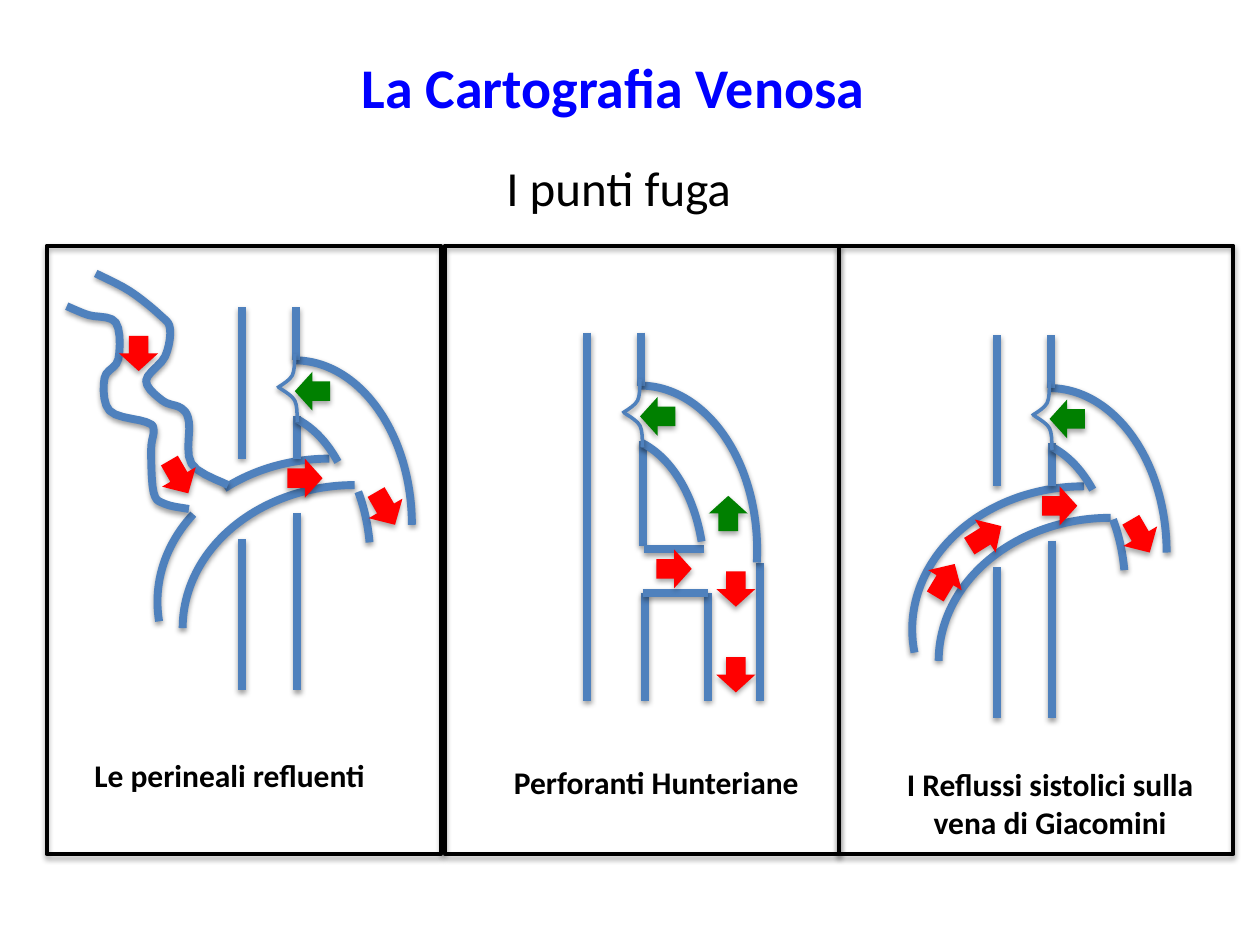
from lxml import etree
from pptx import Presentation
from pptx.dml.color import RGBColor
from pptx.enum.shapes import MSO_CONNECTOR, MSO_SHAPE
from pptx.enum.text import MSO_ANCHOR, MSO_AUTO_SIZE, PP_ALIGN
from pptx.oxml.ns import qn
from pptx.util import Inches, Pt

STRAIGHT = MSO_CONNECTOR.STRAIGHT
ARC, ARROW, RECTANGLE = MSO_SHAPE.ARC, MSO_SHAPE.RIGHT_ARROW, MSO_SHAPE.RECTANGLE
LEFT, CENTER = PP_ALIGN.LEFT, PP_ALIGN.CENTER
TOP, FIT_SHAPE = MSO_ANCHOR.TOP, MSO_AUTO_SIZE.SHAPE_TO_FIT_TEXT

THEME = {
    "font": "Calibri", "title": "0000FF", "text": "000000", "frame": "000000",
    "vessel": "4F81BD", "reflux": "FF0000", "forward": "008000",
    "title_size": 32, "subtitle_size": 28, "caption_size": 18,
    "vessel_width": 4.5, "valve_width": 2, "frame_width": 2.25,
    # opacity %, blur pt, distance pt
    "line_shadow": (38, 3.1, 1.6), "shape_shadow": (35, 3.1, 1.8),
}

# Content: text, left, top, width, height, alignment
TITLE = (["La Cartografia Venosa"], 2.77, 0.37, 4.27, 0.64, LEFT)
SUBTITLE = (["I punti fuga"], 3.92, 1.2, 2.02, 0.57, LEFT)
CAPTIONS = [
    (["Le perineali refluenti"], 0.65, 5.95, 2.38, 0.4, LEFT),
    (["Perforanti Hunteriane"], 3.98, 6.01, 2.51, 0.4, LEFT),
    (["I Reflussi sistolici sulla", "vena di Giacomini"], 7.08, 6.02, 2.51, 0.71, CENTER),
]
FRAME_LEFTS, FRAME_TOP, FRAME_SIZE = (0.37, 3.53, 6.66), 1.95, (3.13, 4.83)

# Sizes shared by the arcs and arrows
OUTER, INNER, CROSS = (1.86, 2.61), (1.44, 2.21), (2.73, 2.27)
QUARTER = (162, 0)
ARROW_HEIGHT, UPRIGHT, TILTED = 0.31, 0.28, 0.3

# verticals: x, top, bottom; horizontals: y, left, right
# arcs: left, top, size, (start, end), flipped
# arrows: left, top, width, rotation, flipped, colour
# walls and valves: points that a smooth curve runs through
JUNCTION = {
    "verticals": [(2.35, 2.44, 2.86)],
    "valves": [[(2.34, 2.81), (2.32, 2.98), (2.2, 3.08)],
               [(2.36, 3.35), (2.34, 3.18), (2.22, 3.08)]],
    "arrows": [(2.34, 2.95, UPRIGHT, 0, True, "forward")],
}
CROSSING = {
    "verticals": [(1.92, 2.44, 3.64), (2.36, 3.3, 3.64), (1.92, 4.28, 5.48), (2.36, 4.07, 5.48)],
    "arcs": [(1.41, 2.86, OUTER, QUARTER, False),
             (1.41, 3.27, INNER, (169.22, 184.76), False),
             (1.5, 3.35, INNER, (191.09, 208.86), False)],
    "arrows": [(2.91, 3.88, TILTED, 240, True, "reflux"),
               (2.28, 3.64, UPRIGHT, 0, False, "reflux")],
}
PERINEAL = {
    "arcs": [(1.25, 3.64, CROSS, (162, 187.69), True),
             (1.45, 3.85, CROSS, QUARTER, True),
             (1.25, 3.64, CROSS, (196.37, 3.96), True)],
    "walls": [
        [(0.76, 2.17), (1.03, 2.31), (1.27, 2.5), (1.35, 2.61), (1.31, 2.83), (1.16, 3.02),
         (1.29, 3.18), (1.44, 3.24), (1.5, 3.35), (1.52, 3.68), (1.81, 3.85)],
        [(0.53, 2.43), (0.7, 2.5), (0.92, 2.56), (0.94, 2.85), (0.83, 3), (0.87, 3.26),
         (1.16, 3.35), (1.22, 3.41), (1.2, 3.57), (1.22, 3.91), (1.31, 4), (1.5, 4.04)],
    ],
    "arrows": [(0.96, 2.65, UPRIGHT, 90, False, "reflux"),
               (1.27, 3.63, TILTED, 240, True, "reflux")],
}
HUNTERIAN_BOTTOM = 5.56
HUNTERIAN = {
    "verticals": [(5.1, 3.5, 4.33)] + [
        (x, top, HUNTERIAN_BOTTOM)
        for x, top in ((4.66, 2.64), (5.12, 4.71), (5.62, 4.71), (6.03, 4.47))],
    "horizontals": [(4.71, 5.1, 5.62), (4.36, 5.11, 5.59)],
    "arcs": [(4.15, 3.06, OUTER, (162, 3.65), False),
             (4.15, 3.46, INNER, (169.22, 203.44), False)],
    "arrows": [(5.7, 4.52, UPRIGHT, 90, False, "reflux"),
               (5.21, 4.36, UPRIGHT, 0, False, "reflux"),
               (5.7, 5.2, UPRIGHT, 90, False, "reflux"),
               (5.64, 3.92, UPRIGHT, 90, True, "forward")],
}
GIACOMINI = {
    "arcs": [(7.24, 3.86, CROSS, (162, 4.69), True), (7.45, 4.11, CROSS, QUARTER, True)],
    "arrows": [(7.67, 4.1, TILTED, 148, True, "reflux"),
               (7.35, 4.45, TILTED, 121, True, "reflux")],
}
# Each panel: own parts, shared parts, shift of the shared parts
PANELS = [(PERINEAL, [CROSSING, JUNCTION], (0, 0)),
          (HUNTERIAN, [JUNCTION], (2.74, 0.2)),
          (GIACOMINI, [CROSSING, JUNCTION], (5.99, 0.22))]


def color(name):
    return RGBColor.from_string(THEME[name])


def add_shadow(shape, name):
    opacity, blur, distance = THEME[name]
    effects = etree.SubElement(shape._element.spPr, qn("a:effectLst"))
    outer = etree.SubElement(effects, qn("a:outerShdw"), blurRad=str(Pt(blur)),
                             dist=str(Pt(distance)), dir="5400000", rotWithShape="0")
    tint = etree.SubElement(outer, qn("a:srgbClr"), val="000000")
    etree.SubElement(tint, qn("a:alpha"), val=str(opacity * 1000))


def outline(shape, name="vessel", width="vessel_width", shadow="line_shadow"):
    shape.line.color.rgb = color(name)
    shape.line.width = Pt(THEME[width])
    add_shadow(shape, shadow)


def add_preset(shapes, kind, left, top, width, height, flipped=False):
    shape = shapes.add_shape(kind, *map(Inches, (left, top, width, height)))
    shape.fill.background()
    if flipped:
        shape._element.spPr.find(qn("a:xfrm")).set("flipH", "1")
    return shape


def smooth(points, steps=5):
    """Catmull-Rom curve through the points."""
    padded = [points[0], *points, points[-1]]
    curve = [points[0]]
    for before, start, end, after in zip(padded, padded[1:], padded[2:], padded[3:]):
        for t in (step / steps for step in range(1, steps + 1)):
            curve.append(tuple(
                b + t / 2 * (c - a + t * (2 * a - 5 * b + 4 * c - d + t * (3 * (b - c) + d - a)))
                for a, b, c, d in zip(before, start, end, after)))
    return curve


def add_curve(shapes, points, dx, dy, width):
    first, *rest = [(Inches(x + dx), Inches(y + dy)) for x, y in smooth(points)]
    builder = shapes.build_freeform(*first)
    builder.add_line_segments(rest, close=False)
    shape = builder.convert_to_shape()
    shape.fill.background()
    outline(shape, width=width)


def draw_parts(shapes, parts, dx=0, dy=0):
    lines = [(x, top, x, bottom) for x, top, bottom in parts.get("verticals", [])]
    lines += [(left, y, right, y) for y, left, right in parts.get("horizontals", [])]
    for x1, y1, x2, y2 in lines:
        ends = map(Inches, (x1 + dx, y1 + dy, x2 + dx, y2 + dy))
        outline(shapes.add_connector(STRAIGHT, *ends))
    for left, top, size, angles, flipped in parts.get("arcs", []):
        arc = add_preset(shapes, ARC, left + dx, top + dy, *size, flipped)
        arc.adjustments[0], arc.adjustments[1] = angles
        outline(arc)
    for key, width in (("walls", "vessel_width"), ("valves", "valve_width")):
        for points in parts.get(key, []):
            add_curve(shapes, points, dx, dy, width)
    for left, top, width, rotation, flipped, name in parts["arrows"]:
        arrow = add_preset(shapes, ARROW, left + dx, top + dy, width, ARROW_HEIGHT, flipped)
        arrow.rotation = rotation
        arrow.fill.solid()
        arrow.fill.fore_color.rgb = color(name)
        arrow.line.fill.background()
        add_shadow(arrow, "shape_shadow")


def write_text(shape, content, size, name="text", bold=True):
    lines, left, top, width, height, alignment = content
    box = {"left": left, "top": top, "width": width, "height": height}
    for attribute, value in box.items():
        setattr(shape, attribute, Inches(value))
    frame = shape.text_frame
    frame.text = "\n".join(lines)
    for attribute, value in {"word_wrap": False, "auto_size": FIT_SHAPE,
                             "vertical_anchor": TOP}.items():
        setattr(frame, attribute, value)
    for paragraph in frame.paragraphs:
        paragraph.alignment = alignment
        font = paragraph.runs[0].font
        for attribute, value in {"name": THEME["font"], "size": Pt(THEME[size]),
                                 "bold": bold}.items():
            setattr(font, attribute, value)
        font.color.rgb = color(name)


def main():
    presentation = Presentation()
    presentation.slide_width, presentation.slide_height = Inches(10), Inches(7.5)
    slide = presentation.slides.add_slide(presentation.slide_layouts[5])
    # Vessel diagrams, one group per panel
    for own, shared, shift in PANELS:
        group = slide.shapes.add_group_shape()
        draw_parts(group.shapes, own)
        for parts in shared:
            draw_parts(group.shapes, parts, *shift)
    # Panel frames
    for left in FRAME_LEFTS:
        frame = add_preset(slide.shapes, RECTANGLE, left, FRAME_TOP, *FRAME_SIZE)
        outline(frame, "frame", "frame_width", "shape_shadow")
    # Title, subtitle and captions
    write_text(slide.shapes.title, TITLE, "title_size", "title")
    write_text(slide.shapes.add_textbox(0, 0, 0, 0), SUBTITLE, "subtitle_size", bold=False)
    for caption in CAPTIONS:
        write_text(slide.shapes.add_textbox(0, 0, 0, 0), caption, "caption_size")
    presentation.save("out.pptx")


if __name__ == "__main__":
    main()
